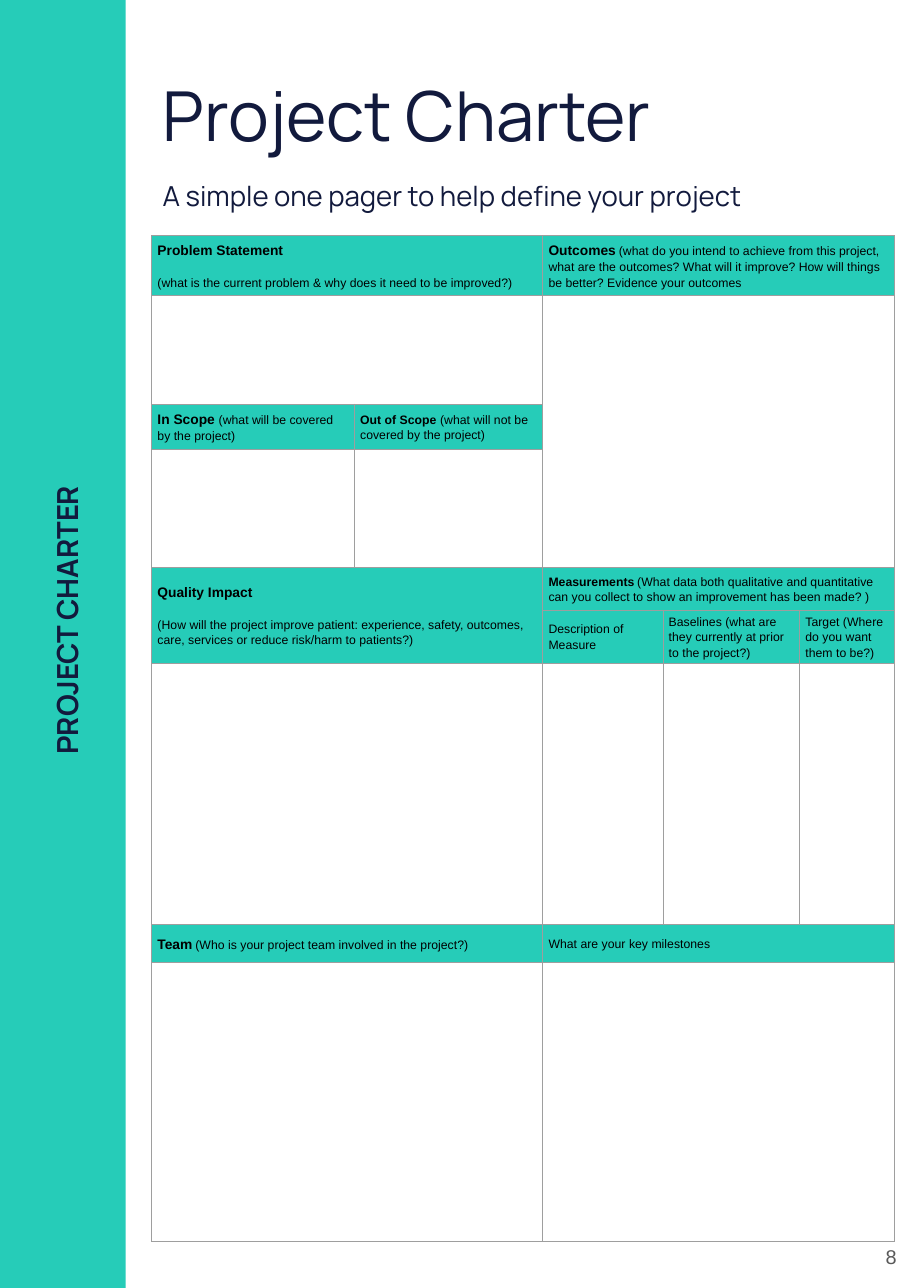
import pptx
import pptx.dml.color
import pptx.enum.shapes
import pptx.enum.text
import pptx.oxml
import pptx.oxml.ns
import pptx.util

Cm = pptx.util.Cm
Pt = pptx.util.Pt
ANCHOR = pptx.enum.text.MSO_ANCHOR
ALIGN = pptx.enum.text.PP_ALIGN
TEAL, NAVY, GREY, BLACK, RULE = "26CCB8", "121A3D", "595959", "000000", "9E9E9E"
PAGE_WIDTH, PAGE_HEIGHT = 21, 29.7

COLUMN_WIDTHS = [4.67, 4.34, 2.77, 3.15, 2.18]
ROW_HEIGHTS = [1.37, 2.51, 1.04, 2.72, 0.99, 1.22, 6.02, 0.89, 6.43]
MERGES = [
    (0, 0, 0, 1), (0, 2, 0, 4), (1, 0, 1, 1), (1, 2, 3, 4), (4, 0, 5, 1), (4, 2, 4, 4),
    (6, 0, 6, 1), (7, 0, 7, 1), (7, 2, 7, 4), (8, 0, 8, 1), (8, 2, 8, 4),
]
HEADINGS = {
    (0, 0): [[("Problem Statement", 9, True)],
             [("(what is the current problem & why does it need to be improved?)", 8, False)]],
    (0, 2): [[("Outcomes", 9, True), (" ", 7, False),
              ("(what do you intend to achieve from this project, what are the outcomes? "
               "What will it improve? How will things be better? Evidence your outcomes", 8, False)]],
    (2, 0): [[("In Scope ", 9, True), ("(what will be covered by the project)", 8, False)]],
    (2, 1): [[("Out of Scope ", 8, True), ("(what will not be covered by the project)", 8, False)]],
    (4, 0): [[("Quality Impact", 9, True)],
             [("(How will the project improve patient: experience, safety, outcomes, care, "
               "services or reduce risk/harm to patients?)", 8, False)]],
    (4, 2): [[("Measurements", 8, True), (" ", 6, False),
              ("(What data both qualitative and quantitative can you collect to show "
               "an improvement has been made? )", 8, False)]],
    (5, 2): [[("Description of Measure", 8, False)]],
    (5, 3): [[("Baselines (what are they currently at prior to the project?)", 8, False)]],
    (5, 4): [[("Target (Where do you want them to be?)", 8, False)]],
    (7, 0): [[("Team", 9, True), (" ", 7, False),
              ("(Who is your project team involved in the project?)", 8, False)]],
    (7, 2): [[("What are your key milestones", 8, False)]],
}


def color(hex_string):
    """Return the colour for a hex string."""
    return pptx.dml.color.RGBColor.from_string(hex_string)


def add_run(paragraph, text, size, font, hex_string, bold=False):
    """Append one formatted run to a paragraph."""
    run = paragraph.add_run()
    run.text = text
    run.font.size = Pt(size)
    run.font.name = font
    run.font.bold = bold
    run.font.color.rgb = color(hex_string)


def set_frame(frame, inset, anchor):
    """Wrap a text frame and give it even insets and an anchor."""
    frame.word_wrap = True
    frame.auto_size = pptx.enum.text.MSO_AUTO_SIZE.NONE
    frame.vertical_anchor = anchor
    frame.margin_left = frame.margin_right = Cm(inset)
    frame.margin_top = frame.margin_bottom = Cm(inset)


def place(shape, left, top, width, height):
    """Move and size a shape in centimetres."""
    shape.left, shape.top = Cm(left), Cm(top)
    shape.width, shape.height = Cm(width), Cm(height)


def add_heading(slide, left, top, width):
    """Fill the title and subtitle placeholders, one below the other."""
    title, subtitle = slide.shapes.title, slide.placeholders[1]
    place(title, left, top, width, 2.6)
    place(subtitle, left, top + 2.35, width, 1.4)
    lines = [(title, "Project Charter", 45, 1), (subtitle, "A simple one pager to help define your project", 18, 1.15)]
    for shape, text, size, line_spacing in lines:
        set_frame(shape.text_frame, 0.25, ANCHOR.TOP)
        paragraph = shape.text_frame.paragraphs[0]
        paragraph.alignment = ALIGN.LEFT
        paragraph.space_before = Pt(0)
        paragraph.line_spacing = line_spacing
        add_run(paragraph, text, size, "Manrope", NAVY)


def add_side_band(slide, left, top, width, height):
    """Draw the coloured band with its upward reading label."""
    band = slide.shapes.add_shape(
        pptx.enum.shapes.MSO_SHAPE.RECTANGLE, Cm(left), Cm(top), Cm(width), Cm(height))
    band.shadow.inherit = False
    band.fill.solid()
    band.fill.fore_color.rgb = color(TEAL)
    band.line.fill.background()
    length, thickness = 10, 1.32
    center_x, center_y = left + width / 2 + 0.09, top + height / 2 - 0.55
    label = slide.shapes.add_textbox(
        Cm(center_x - length / 2), Cm(center_y - thickness / 2), Cm(length), Cm(thickness))
    label.rotation = 270
    set_frame(label.text_frame, 0.25, ANCHOR.TOP)
    paragraph = label.text_frame.paragraphs[0]
    paragraph.alignment = ALIGN.CENTER
    add_run(paragraph, "PROJECT CHARTER", 19, "Manrope", NAVY, True)


def set_borders(cell):
    """Draw thin grey rules on the four sides of a cell."""
    properties = cell._tc.get_or_add_tcPr()
    for position, side in enumerate(("lnL", "lnR", "lnT", "lnB")):
        properties.insert(position, pptx.oxml.parse_xml(
            f'<a:{side} {pptx.oxml.ns.nsdecls("a")} w="{Pt(0.75)}"><a:solidFill>'
            f'<a:srgbClr val="{RULE}"/></a:solidFill></a:{side}>'))


def fill_heading_cell(cell, paragraphs):
    """Colour a heading cell and write its paragraphs."""
    cell.fill.solid()
    cell.fill.fore_color.rgb = color(TEAL)
    cell.vertical_anchor = ANCHOR.MIDDLE
    cell.margin_left = cell.margin_right = Cm(0.13)
    cell.margin_top = cell.margin_bottom = Cm(0)
    for index, runs in enumerate(paragraphs):
        frame = cell.text_frame
        paragraph = frame.add_paragraph() if index else frame.paragraphs[0]
        paragraph.line_spacing = 1.15
        paragraph.space_after = Pt(10)
        for text, size, bold in runs:
            add_run(paragraph, text, size, "Arial", BLACK, bold)


def add_charter_table(slide, left, top, width, height):
    """Build the charter grid, scaled to its box."""
    table = slide.shapes.add_table(
        len(ROW_HEIGHTS), len(COLUMN_WIDTHS), Cm(left), Cm(top), Cm(width), Cm(height)).table
    table.first_row = table.horz_banding = False
    for column, share in zip(table.columns, COLUMN_WIDTHS):
        column.width = Cm(width * share / sum(COLUMN_WIDTHS))
    for row, share in zip(table.rows, ROW_HEIGHTS):
        row.height = Cm(height * share / sum(ROW_HEIGHTS))
    for cell in table.iter_cells():
        cell.fill.background()
        set_borders(cell)
    for first_row, first_column, last_row, last_column in MERGES:
        table.cell(first_row, first_column).merge(table.cell(last_row, last_column))
    for (row, column), paragraphs in HEADINGS.items():
        fill_heading_cell(table.cell(row, column), paragraphs)


def add_page_number(slide, left, top, width, height):
    """Write the page number in the lower right corner."""
    box = slide.shapes.add_textbox(Cm(left), Cm(top), Cm(width), Cm(height))
    set_frame(box.text_frame, 0.33, ANCHOR.MIDDLE)
    paragraph = box.text_frame.paragraphs[0]
    paragraph.alignment = ALIGN.RIGHT
    add_run(paragraph, "8", 13, "Arial", GREY)


def main():
    """Build the project charter page and save it."""
    presentation = pptx.Presentation()
    presentation.slide_width, presentation.slide_height = Cm(PAGE_WIDTH), Cm(PAGE_HEIGHT)
    slide = presentation.slides.add_slide(presentation.slide_layouts[0])
    add_side_band(slide, 0, 0, 2.9, PAGE_HEIGHT)
    add_heading(slide, 3.5, 1.42, 17.15)
    add_charter_table(slide, 3.5, 5.44, 17.12, 23.19)
    add_page_number(slide, 19.73, 28.24, 1.27, 1.46)
    presentation.save("out.pptx")


if __name__ == "__main__":
    main()
